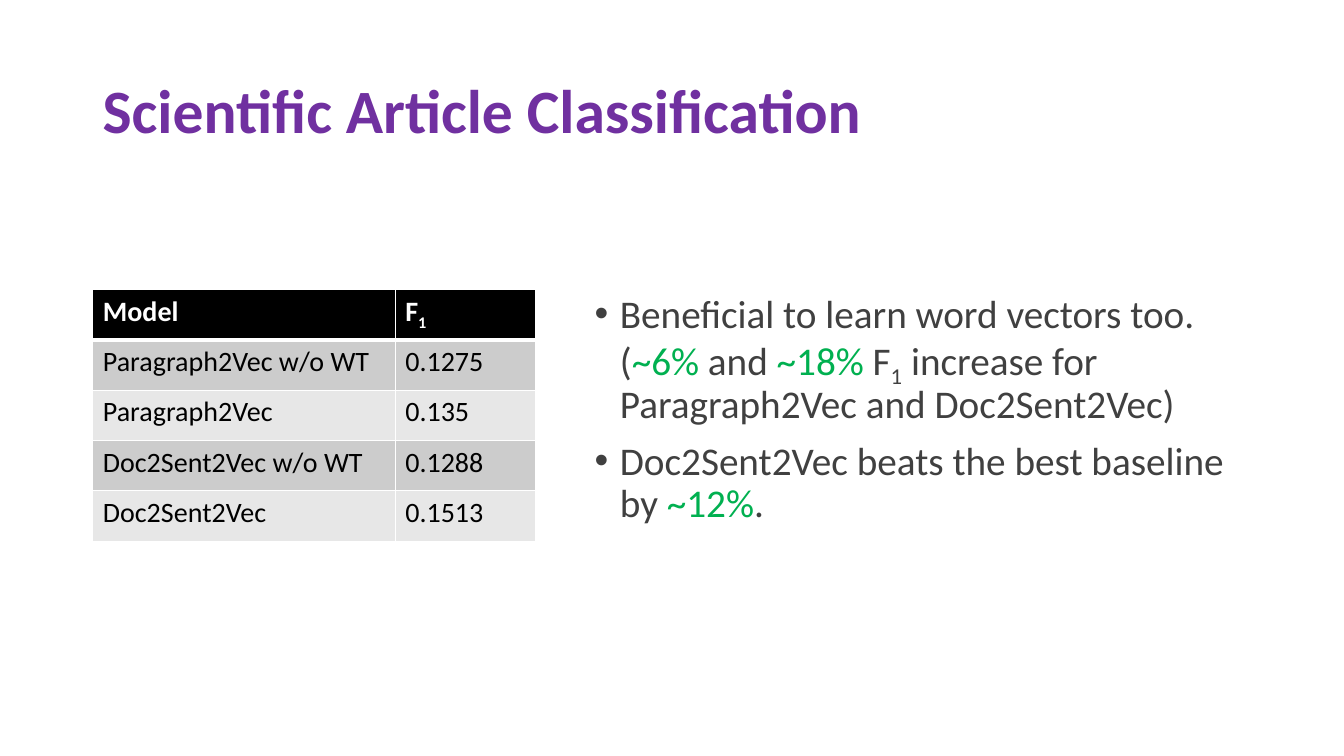
from dataclasses import dataclass

from lxml import etree
from pptx import Presentation
from pptx.dml.color import RGBColor
from pptx.enum.text import MSO_ANCHOR
from pptx.oxml.ns import qn
from pptx.util import Inches, Pt

TOP, MIDDLE = MSO_ANCHOR.TOP, MSO_ANCHOR.MIDDLE


@dataclass(frozen=True)
class Theme:
    font: str = "Calibri"
    title: str = "7030A0"
    body: str = "404040"
    accent: str = "00B050"
    dark: str = "000000"
    light: str = "FFFFFF"
    bands: tuple = ("CCCCCC", "E7E7E7")
    title_size: int = 44
    body_size: int = 28
    table_size: int = 20


class Deck:
    def __init__(self, theme):
        self.theme = theme
        self.prs = Presentation()
        self.prs.slide_width = Inches(13.33)
        self.prs.slide_height = Inches(7.5)
        self.slide = self.prs.slides.add_slide(self.prs.slide_layouts[6])

    def add_runs(self, para, parts, size, bold=False):
        """Add runs given as (text, colour) or (text, colour, baseline)."""
        for text, color, *base in parts:
            run = para.add_run()
            run.text = text
            font = run.font
            font.name, font.size, font.bold = self.theme.font, Pt(size), bold
            font.color.rgb = RGBColor.from_string(color)
            if base:
                run._r.get_or_add_rPr().set("baseline", str(base[0] * 1000))

    def box(self, left, top, width, height, anchor):
        frame = self.slide.shapes.add_textbox(
            Inches(left), Inches(top), Inches(width), Inches(height)).text_frame
        frame.word_wrap = True
        frame.vertical_anchor = anchor
        return frame

    def title(self, text, *place):
        para = self.box(*place, MIDDLE).paragraphs[0]
        para.line_spacing = 0.9
        self.add_runs(para, [(text, self.theme.title)], self.theme.title_size, True)

    def bullets(self, items, *place):
        frame = self.box(*place, TOP)
        for i, parts in enumerate(items):
            para = frame.add_paragraph() if i else frame.paragraphs[0]
            para.line_spacing = 0.9
            para.space_before = Pt(10)
            props = para._p.get_or_add_pPr()
            props.set("marL", str(Inches(0.25)))
            props.set("indent", str(Inches(-0.25)))
            etree.SubElement(props, qn("a:buFont")).set("typeface", "Arial")
            etree.SubElement(props, qn("a:buChar")).set("char", "•")
            self.add_runs(para, parts, self.theme.body_size)

    def border(self, cell, widths):
        props = cell._tc.get_or_add_tcPr()
        for side, width in widths.items():
            line = etree.SubElement(props, qn(f"a:ln{side}"), w=str(Pt(width)))
            fill = etree.SubElement(line, qn("a:solidFill"))
            etree.SubElement(fill, qn("a:srgbClr")).set("val", self.theme.light)

    def table(self, rows, left, top, widths, step):
        theme = self.theme
        grid = self.slide.shapes.add_table(
            len(rows), len(widths), Inches(left), Inches(top),
            Inches(sum(widths)), Inches(step * len(rows))).table
        for col, width in zip(grid.columns, widths):
            col.width = Inches(width)
        for r, row in enumerate(rows):
            head = r == 0
            color = theme.light if head else theme.dark
            fill = theme.dark if head else theme.bands[(r - 1) % 2]
            for c, parts in enumerate(row):
                cell = grid.cell(r, c)
                # The rule under the header is thicker
                self.border(cell, {"L": 1, "R": 1, "T": 3 if r == 1 else 1,
                                   "B": 3 if head else 1})
                cell.fill.solid()
                cell.fill.fore_color.rgb = RGBColor.from_string(fill)
                runs = [(text, color, *base) for text, *base in parts]
                self.add_runs(cell.text_frame.paragraphs[0], runs,
                              theme.table_size, head)


def main():
    theme = Theme()
    deck = Deck(theme)
    body, accent = theme.body, theme.accent

    # Heading
    deck.title("Scientific Article Classification", 0.92, 0.4, 11.5, 1.45)

    # Scores by model
    scores = [("Paragraph2Vec w/o WT", "0.1275"), ("Paragraph2Vec", "0.135"),
              ("Doc2Sent2Vec w/o WT", "0.1288"), ("Doc2Sent2Vec", "0.1513")]
    rows = [[[("Model",)], [("F",), ("1", -25)]]]
    rows += [[[(name,)], [(score,)]] for name, score in scores]
    deck.table(rows, 0.92, 2.87, (3, 1.39), 0.5)

    # Findings
    deck.bullets([
        [("Beneficial to learn word vectors too. (", body), ("~6% ", accent),
         ("and ", body), ("~18% ", accent), ("F", body), ("1", body, -25),
         (" increase for Paragraph2Vec and Doc2Sent2Vec)", body)],
        [("Doc2Sent2Vec beats the best baseline by ", body),
         ("~12%", accent), (".", body)],
    ], 5.8, 2.87, 6.61, 2.38)

    deck.prs.save("out.pptx")


if __name__ == "__main__":
    main()
